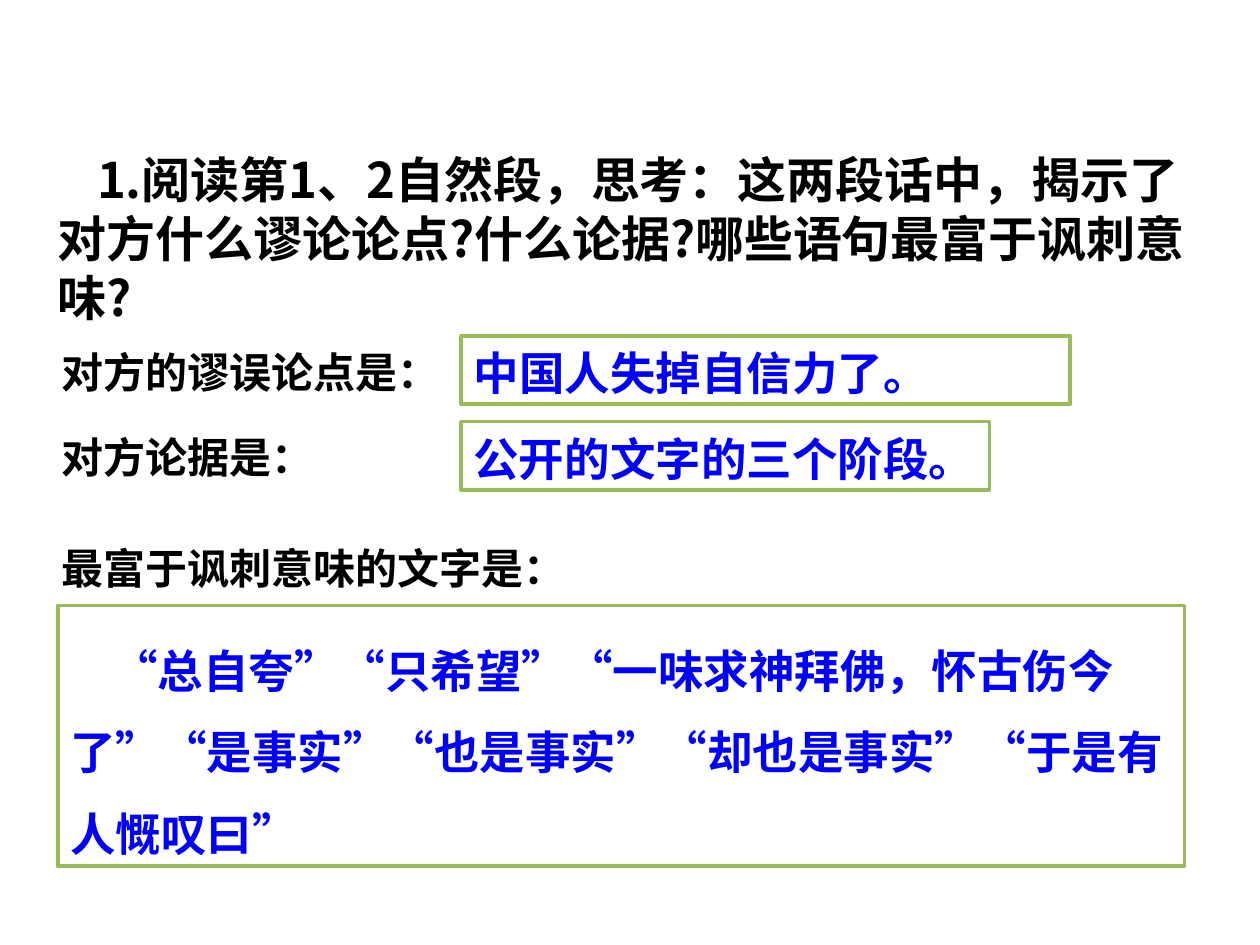
import pptx
import pptx.util
import pptx.dml.color
import pptx.enum.lang
import pptx.enum.shapes
import pptx.enum.text
import pptx.oxml
import pptx.oxml.ns

Pt = pptx.util.Pt
RGB = pptx.dml.color.RGBColor
WHITE = RGB(0xFF, 0xFF, 0xFF)
BLACK = RGB(0, 0, 0)
BLUE = RGB(0, 0, 0xFF)
GREEN = RGB(0x9B, 0xBB, 0x59)
SANS = "Noto Sans CJK SC"

ROWS = [
    (192, "对方的谬误论点是：", 225, "中国人失掉自信力了。", 348),
    (241, "对方论据是：", 186, "公开的文字的三个阶段。", 302),
]
TASK = ("1.阅读第1、2自然段，思考：这两段话中，揭示了对方什么谬论论点?"
        "什么论据?哪些语句最富于讽刺意味?")
QUOTES = ("“总自夸”“只希望”“一味求神拜佛，怀古伤今了”“是事实”"
          "“也是事实”“却也是事实”“于是有人慨叹曰”")


class Page:
    label_font = {"name": "Arial", "size": Pt(24), "bold": True}
    answer_font = {"name": SANS, "size": Pt(26), "bold": True}
    task_font = {"name": SANS, "size": Pt(28), "bold": True}

    def __init__(self, deck):
        self.slide = deck.slides.add_slide(deck.slide_layouts[5])

    def fill(self, shape, alpha):
        """Fill white with the given opacity in percent."""
        shape.fill.solid()
        shape.fill.fore_color.rgb = WHITE
        color = shape.fill._xPr.find(".//" + pptx.oxml.ns.qn("a:srgbClr"))
        node = pptx.oxml.parse_xml(
            f'<a:alpha {pptx.oxml.ns.nsdecls("a")} val="{alpha * 1000}"/>')
        color.append(node)

    def text(self, shape, words, font, color, lead, indent=0, side=7.2):
        frame = shape.text_frame
        form = {"word_wrap": True,
                "auto_size": pptx.enum.text.MSO_AUTO_SIZE.NONE,
                "vertical_anchor": pptx.enum.text.MSO_ANCHOR.TOP,
                "margin_left": Pt(side), "margin_right": Pt(side),
                "margin_top": Pt(5.6), "margin_bottom": Pt(3)}
        for key, val in form.items():
            setattr(frame, key, val)
        para = frame.paragraphs[0]
        para.alignment = pptx.enum.text.PP_ALIGN.LEFT
        para.line_spacing = Pt(lead)
        para._p.get_or_add_pPr().set("indent", str(Pt(indent)))
        run = para.add_run()
        run.text = words
        for key, val in font.items():
            setattr(run.font, key, val)
        run.font.color.rgb = color
        run.font.language_id = pptx.enum.lang.MSO_LANGUAGE_ID.SIMPLIFIED_CHINESE
        east = pptx.oxml.parse_xml(
            f'<a:ea {pptx.oxml.ns.nsdecls("a")} typeface="{SANS}"/>')
        run.font._rPr.find(pptx.oxml.ns.qn("a:latin")).addnext(east)

    def box(self, left, top, width, height, alpha):
        shape = self.slide.shapes.add_shape(
            pptx.enum.shapes.MSO_SHAPE.RECTANGLE,
            Pt(left), Pt(top), Pt(width), Pt(height))
        shape.shadow.inherit = False
        shape.line.fill.background()
        self.fill(shape, alpha)
        return shape

    def label(self, top, words, width):
        shape = self.box(28, top, width, 36, 40)
        self.text(shape, words, self.label_font, BLACK, 29)

    def answer(self, left, top, width, height, words, lead=31, indent=0):
        shape = self.box(left, top, width, height, 40)
        shape.line.color.rgb = GREEN
        shape.line.width = Pt(2)
        self.text(shape, words, self.answer_font, BLUE, lead, indent)

    def task(self, words):
        shape = self.slide.shapes.title
        place = {"left": 28, "top": 80, "width": 672, "height": 105}
        for key, val in place.items():
            setattr(shape, key, Pt(val))
        self.fill(shape, 21)
        self.text(shape, words, self.task_font, BLACK, 33.6, 22.5, 5)


def main():
    deck = pptx.Presentation()
    deck.slide_width, deck.slide_height = Pt(720), Pt(540)
    page = Page(deck)
    page.task(TASK)
    for top, name, width, reply, span in ROWS:
        page.label(top, name, width)
        page.answer(263.5, top, span, 39, reply)
    page.label(304, "最富于讽刺意味的文字是：", 304)
    page.answer(33, 346, 644, 149, QUOTES, 46.8, 24)
    deck.save("out.pptx")


if __name__ == "__main__":
    main()
